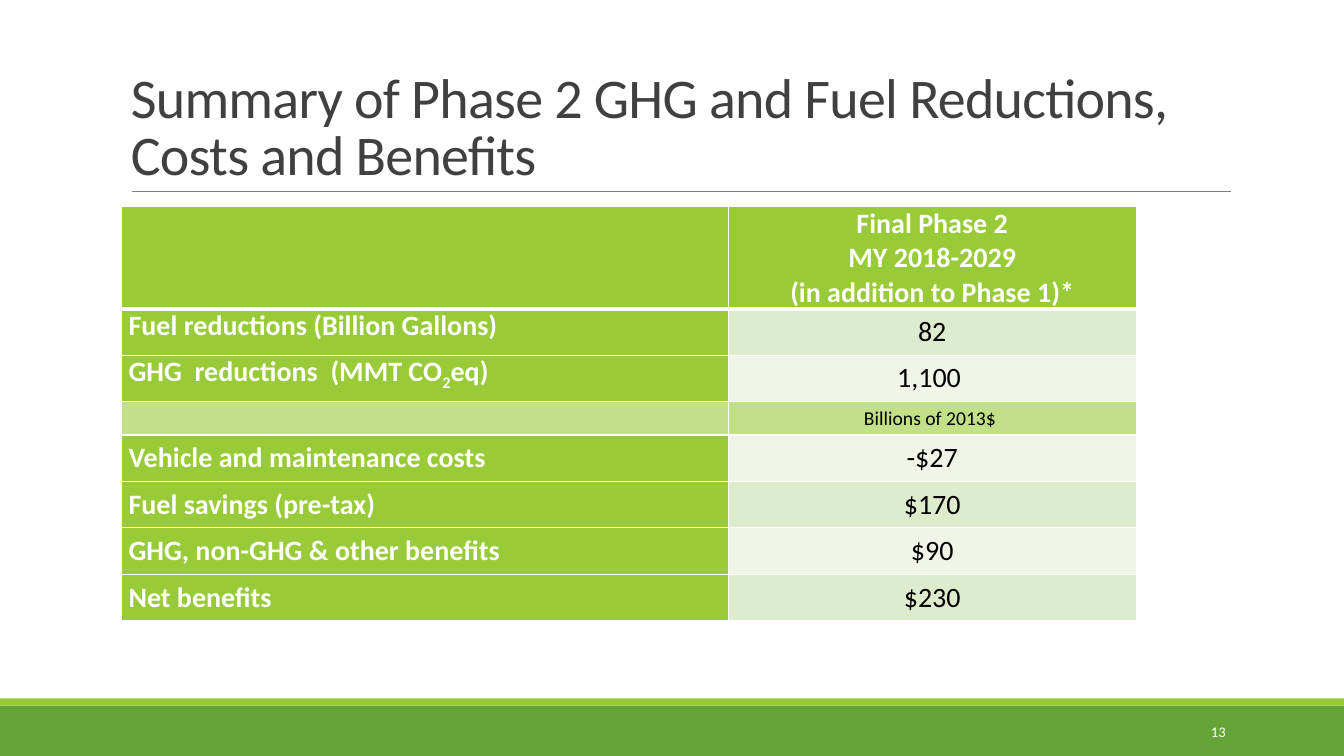
from dataclasses import dataclass

from lxml import etree
from pptx import Presentation
from pptx.dml.color import RGBColor
from pptx.enum.shapes import MSO_CONNECTOR, MSO_SHAPE
from pptx.enum.text import MSO_ANCHOR, PP_ALIGN
from pptx.oxml.ns import qn
from pptx.slide import Slide
from pptx.table import Table, _Cell
from pptx.text.text import TextFrame, _Paragraph
from pptx.util import Cm, Length, Pt

RECTANGLE = MSO_SHAPE.RECTANGLE
STRAIGHT = MSO_CONNECTOR.STRAIGHT
TOP, MIDDLE, BOTTOM = MSO_ANCHOR.TOP, MSO_ANCHOR.MIDDLE, MSO_ANCHOR.BOTTOM
LEFT, CENTER, RIGHT = PP_ALIGN.LEFT, PP_ALIGN.CENTER, PP_ALIGN.RIGHT


@dataclass(frozen=True)
class Theme:
    font: str = "Calibri"
    white: str = "FFFFFF"
    black: str = "000000"
    title: str = "404040"
    rule: str = "808080"
    footer: str = "63A537"
    accent: str = "99CB38"
    units: str = "C2E088"
    odd_band: str = "DEECCE"
    even_band: str = "EFF6E8"
    title_size: float = 40
    table_size: float = 20
    units_size: float = 14
    number_size: float = 10.5


@dataclass(frozen=True)
class Run:
    text: str
    baseline: int = 0


@dataclass(frozen=True)
class Style:
    size: float
    color: str
    bold: bool = False
    align: PP_ALIGN = LEFT
    spacing: int = 0


@dataclass(frozen=True)
class Measure:
    label: tuple[Run, ...]
    value: str
    label_anchor: MSO_ANCHOR = MIDDLE
    is_units: bool = False


THEME = Theme()
HEADER_LINES = ("Final Phase 2", "MY 2018-2029", "(in addition to Phase 1)*")
MEASURES = (
    Measure((Run("Fuel reductions (Billion Gallons)"),), "82", TOP),
    Measure((Run("GHG  reductions  (MMT CO"), Run("2", -25000), Run("eq)")),
            "1,100 ", TOP),
    Measure((), "Billions of 2013$ ", is_units=True),
    Measure((Run("Vehicle and maintenance costs"),), "-$27"),
    Measure((Run("Fuel savings (pre-tax)"),), "$170"),
    Measure((Run("GHG, non-GHG & other benefits"),), "$90"),
    Measure((Run("Net benefits"),), "$230"),
)
HEADER_STYLE = Style(THEME.table_size, THEME.white, True, CENTER)
LABEL_STYLE = Style(THEME.table_size, THEME.white, True)
VALUE_STYLE = Style(THEME.table_size, THEME.black, align=CENTER)
UNITS_STYLE = Style(THEME.units_size, THEME.black, align=CENTER)
TITLE_STYLE = Style(THEME.title_size, THEME.title, spacing=-50)
NUMBER_STYLE = Style(THEME.number_size, THEME.white, align=RIGHT)

SLIDE_WIDTH, SLIDE_HEIGHT = Cm(33.87), Cm(19.05)
HEADER_HEIGHT, ROW_HEIGHT, UNITS_HEIGHT = Cm(2.57), Cm(1.17), Cm(0.84)
COLUMN_WIDTHS = (Cm(15.29), Cm(10.29))
THIN, THICK = Pt(1), Pt(3)


def add_runs(paragraph: _Paragraph, runs: tuple[Run, ...], style: Style) -> None:
    paragraph.alignment = style.align
    for part in runs:
        run = paragraph.add_run()
        run.text = part.text
        run.font.name = THEME.font
        run.font.size = Pt(style.size)
        run.font.bold = style.bold
        run.font.color.rgb = RGBColor.from_string(style.color)
        properties = run.font._element
        if part.baseline:
            properties.set("baseline", str(part.baseline))
        if style.spacing:
            properties.set("spc", str(style.spacing))


def add_text(slide: Slide, box: tuple[Length, Length, Length, Length],
             text: str, style: Style, anchor: MSO_ANCHOR) -> TextFrame:
    frame = slide.shapes.add_textbox(*box).text_frame
    frame.word_wrap = True
    frame.vertical_anchor = anchor
    add_runs(frame.paragraphs[0], (Run(text),), style)
    return frame


def add_band(slide: Slide, top: Length, height: Length, color: str) -> None:
    band = slide.shapes.add_shape(RECTANGLE, 0, top, SLIDE_WIDTH, height)
    band.shadow.inherit = False
    band.fill.solid()
    band.fill.fore_color.rgb = RGBColor.from_string(color)
    band.line.fill.background()


def add_title_rule(slide: Slide) -> None:
    height = Cm(4.82)
    rule = slide.shapes.add_connector(STRAIGHT, Cm(3.32), height, Cm(31.01), height)
    rule.line.color.rgb = RGBColor.from_string(THEME.rule)
    rule.line.width = Pt(0.5)
    etree.SubElement(rule._element.spPr, qn("a:effectLst"))


def format_cell(cell: _Cell, fill: str, anchor: MSO_ANCHOR,
                top: Length = THIN, bottom: Length = THIN) -> None:
    """Set insets and anchor, then borders before the fill as the schema orders."""
    cell.margin_left = cell.margin_right = Cm(0.18)
    cell.margin_top = cell.margin_bottom = 0
    cell.vertical_anchor = anchor
    properties = cell._tc.get_or_add_tcPr()
    for side, width in (("L", THIN), ("R", THIN), ("T", top), ("B", bottom)):
        border = etree.SubElement(properties, qn(f"a:ln{side}"), w=str(width))
        solid = etree.SubElement(border, qn("a:solidFill"))
        etree.SubElement(solid, qn("a:srgbClr"), val=THEME.white)
    cell.fill.solid()
    cell.fill.fore_color.rgb = RGBColor.from_string(fill)


def fill_header(table: Table) -> None:
    table.rows[0].height = HEADER_HEIGHT
    for cell in table.rows[0].cells:
        format_cell(cell, THEME.accent, TOP, bottom=THICK)
    frame = table.cell(0, 1).text_frame
    for index, line in enumerate(HEADER_LINES):
        paragraph = frame.add_paragraph() if index else frame.paragraphs[0]
        add_runs(paragraph, (Run(line),), HEADER_STYLE)


def fill_measure(table: Table, row: int, measure: Measure) -> None:
    band = THEME.odd_band if row % 2 else THEME.even_band
    label_fill, value_fill, value_style = THEME.accent, band, VALUE_STYLE
    table.rows[row].height = ROW_HEIGHT
    if measure.is_units:
        label_fill = value_fill = THEME.units
        value_style = UNITS_STYLE
        table.rows[row].height = UNITS_HEIGHT
    top = THICK if row == 1 else THIN
    label, value = table.cell(row, 0), table.cell(row, 1)
    format_cell(label, label_fill, measure.label_anchor, top)
    format_cell(value, value_fill, MIDDLE, top)
    add_runs(label.text_frame.paragraphs[0], measure.label, LABEL_STYLE)
    add_runs(value.text_frame.paragraphs[0], (Run(measure.value),), value_style)


def add_summary_table(slide: Slide) -> None:
    table = slide.shapes.add_table(
        len(MEASURES) + 1, len(COLUMN_WIDTHS), Cm(3.06), Cm(5.21),
        sum(COLUMN_WIDTHS), Cm(10.42)).table
    table.first_row = table.horz_banding = False
    for column, width in zip(table.columns, COLUMN_WIDTHS):
        column.width = width
    fill_header(table)
    for row, measure in enumerate(MEASURES, start=1):
        fill_measure(table, row, measure)


def main() -> None:
    presentation = Presentation()
    presentation.slide_width, presentation.slide_height = SLIDE_WIDTH, SLIDE_HEIGHT
    slide = presentation.slides.add_slide(presentation.slide_layouts[6])
    add_band(slide, Cm(17.78), Cm(1.27), THEME.footer)
    add_band(slide, Cm(17.6), Cm(0.18), THEME.accent)
    add_title_rule(slide)
    title = add_text(
        slide, (Cm(3.05), Cm(0.79), Cm(27.94), Cm(4.04)),
        "Summary of Phase 2 GHG and Fuel Reductions, Costs and Benefits",
        TITLE_STYLE, BOTTOM)
    title.paragraphs[0].line_spacing = 0.85
    add_text(slide, (Cm(27.51), Cm(17.93), Cm(3.63), Cm(1.02)), "13",
             NUMBER_STYLE, MIDDLE)
    add_summary_table(slide)
    presentation.save("out.pptx")


if __name__ == "__main__":
    main()
